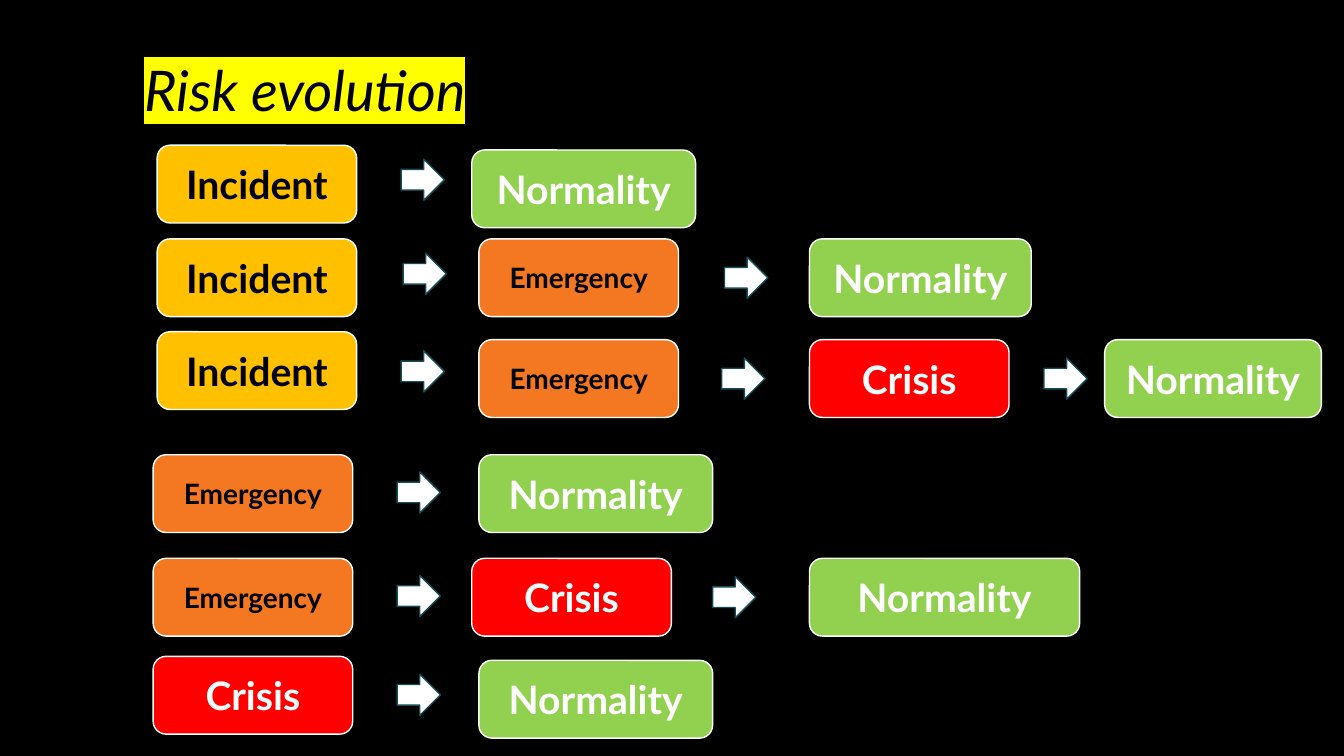
from lxml import etree
from pptx import Presentation
from pptx.dml.color import RGBColor
from pptx.enum import shapes, text
from pptx.oxml import ns
from pptx.util import Cm, Pt

COLORS = {
    "black": "000000", "white": "FFFFFF", "yellow": "FFFF00", "teal": "154C56",
    "amber": "FFC000", "orange": "F47721", "red": "FF0000", "green": "92D050",
}
# State: fill, text colour, text size
STATES = {
    "Incident": ("amber", "black", 28),
    "Emergency": ("orange", "black", 20),
    "Crisis": ("red", "white", 28),
    "Normality": ("green", "white", 28),
}
FONT = "Lato"
STATE_WIDTH, STATE_HEIGHT = 5.03, 1.96
ARROW_WIDTH, ARROW_HEIGHT = 1.09, 1.04

# Lengths in cm. Chain: left, top, first state, steps.
# Step: arrow left, arrow drop, state, state left, state drop, state width;
# drops are measured from the top of the chain.
CHAINS = [
    (3.96, 3.66, "Incident", [
        (10.11, 0.35, "Normality", 11.89, 0.12, 5.64)]),
    (3.96, 6.02, "Incident", [
        (10.16, 0.36, "Emergency", 12.07, 0, STATE_WIDTH),
        (18.26, 0.46, "Normality", 20.4, 0, 5.59)]),
    (3.96, 8.36, "Incident", [
        (10.11, 0.48, "Emergency", 12.07, 0.2, STATE_WIDTH),
        (18.19, 0.66, "Crisis", 20.4, 0.2, STATE_WIDTH),
        (26.31, 0.66, "Normality", 27.84, 0.2, 5.46)]),
    (3.86, 11.46, "Emergency", [
        (10.01, 0.43, "Normality", 12.07, 0, 5.89)]),
    (3.86, 14.07, "Emergency", [
        (10.01, 0.43, "Crisis", 11.89, 0, STATE_WIDTH),
        (17.96, 0.46, "Normality", 20.4, 0, 6.81)]),
    (3.86, 16.54, "Crisis", [
        (10.01, 0.45, "Normality", 12.07, 0.1, 5.89)]),
]


def rgb(name):
    return RGBColor.from_string(COLORS[name])


def add_block(slide, kind, left, top, width, height, fill, line):
    shape = slide.shapes.add_shape(kind, Cm(left), Cm(top), Cm(width), Cm(height))
    shape.shadow.inherit = False
    shape.fill.solid()
    shape.fill.fore_color.rgb = rgb(fill)
    shape.line.color.rgb = rgb(line)
    shape.line.width = Pt(1)
    return shape


def style_font(font, size, color):
    font.name = FONT
    font.size = Pt(size)
    font.color.rgb = rgb(color)


def add_state(slide, state, left, top, width=STATE_WIDTH):
    fill, color, size = STATES[state]
    shape = add_block(slide, shapes.MSO_SHAPE.ROUNDED_RECTANGLE,
                      left, top, width, STATE_HEIGHT, fill, "white")
    shape.text_frame.vertical_anchor = text.MSO_ANCHOR.MIDDLE
    paragraph = shape.text_frame.paragraphs[0]
    paragraph.text = state
    paragraph.alignment = text.PP_ALIGN.CENTER
    style_font(paragraph.font, size, color)
    paragraph.font.bold = True


def add_chain(slide, left, top, first_state, steps):
    """Draw one row: a first state, then an arrow and a state per step."""
    add_state(slide, first_state, left, top)
    for arrow_left, arrow_drop, state, state_left, state_drop, width in steps:
        add_block(slide, shapes.MSO_SHAPE.RIGHT_ARROW, arrow_left, top + arrow_drop,
                  ARROW_WIDTH, ARROW_HEIGHT, "white", "teal")
        add_state(slide, state, state_left, top + state_drop, width)


def add_title(slide, left, top, width, height):
    box = slide.shapes.add_textbox(Cm(left), Cm(top), Cm(width), Cm(height))
    frame = box.text_frame
    frame.word_wrap = True
    frame.vertical_anchor = text.MSO_ANCHOR.BOTTOM
    paragraph = frame.paragraphs[0]
    paragraph.line_spacing = 1.2
    run = paragraph.add_run()
    run.text = "Risk evolution"
    style_font(run.font, 40, "black")
    run.font.italic = True
    highlight = etree.Element(ns.qn("a:highlight"))
    etree.SubElement(highlight, ns.qn("a:srgbClr"), val=COLORS["yellow"])
    run.font._element.find(ns.qn("a:solidFill")).addnext(highlight)


def main():
    presentation = Presentation()
    presentation.slide_width, presentation.slide_height = Cm(33.87), Cm(19.05)
    slide = presentation.slides.add_slide(presentation.slide_layouts[6])
    slide.background.fill.solid()
    slide.background.fill.fore_color.rgb = rgb("black")
    add_title(slide, 3.38, 1.02, 25.4, 2.21)
    for chain in CHAINS:
        add_chain(slide, *chain)
    presentation.save("out.pptx")


if __name__ == "__main__":
    main()
